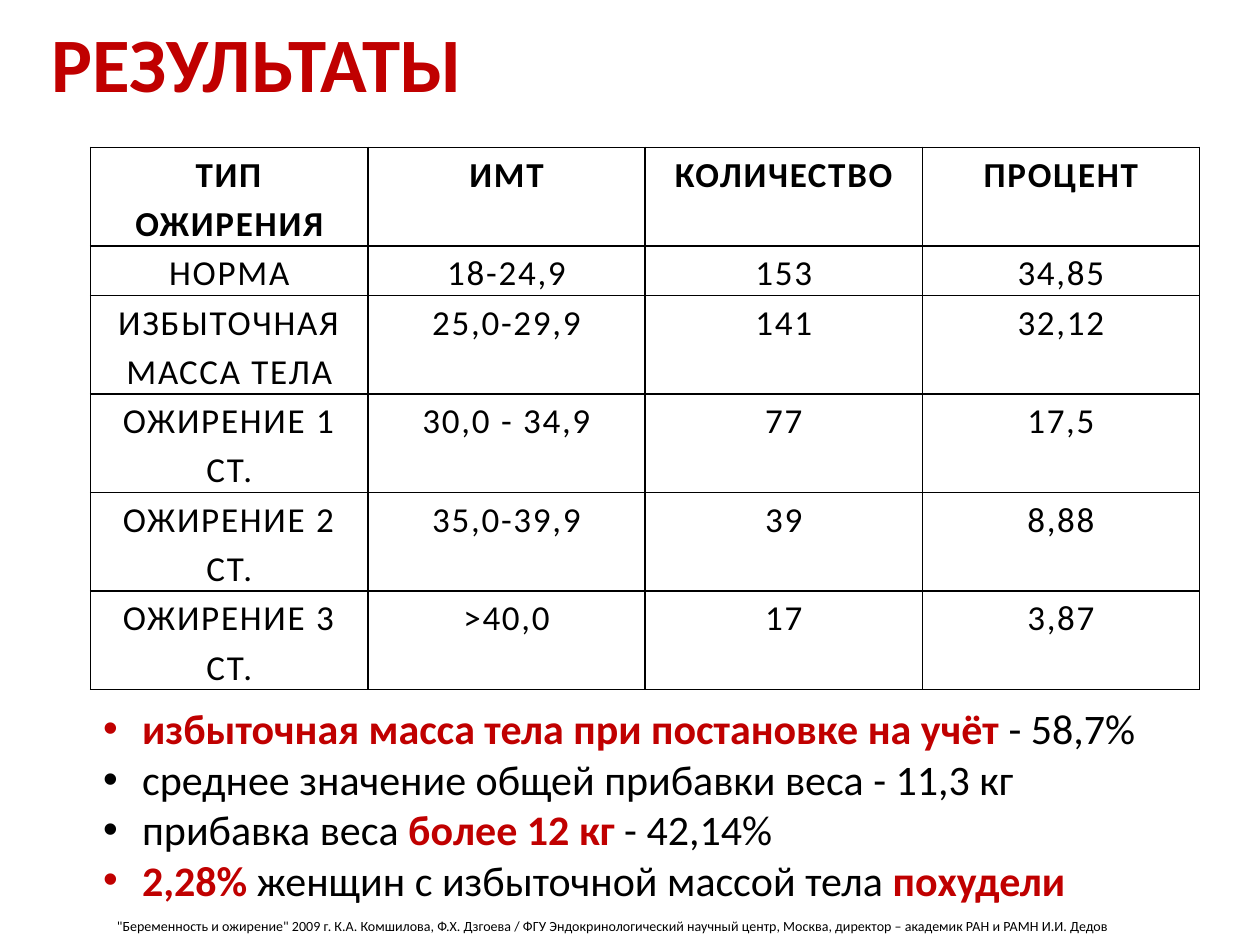
from lxml.etree import SubElement
from pptx import Presentation
from pptx.dml.color import RGBColor
from pptx.enum.text import MSO_ANCHOR, PP_ALIGN
from pptx.oxml.ns import qn
from pptx.util import Inches, Pt

RED = "C00000"
BLACK = "000000"
WHITE = "FFFFFF"

RESULTS = [
    ["ТИП ОЖИРЕНИЯ", "ИМТ", "КОЛИЧЕСТВО", "ПРОЦЕНТ"],
    ["НОРМА", "18-24,9", "153", "34,85"],
    ["ИЗБЫТОЧНАЯ МАССА ТЕЛА", "25,0-29,9", "141", "32,12"],
    ["ОЖИРЕНИЕ 1 СТ.", "30,0 - 34,9", "77", "17,5"],
    ["ОЖИРЕНИЕ 2 СТ.", "35,0-39,9", "39", "8,88"],
    ["ОЖИРЕНИЕ 3 СТ.", ">40,0", "17", "3,87"],
]
ROW_HEIGHTS = [0.38, 0.38, 0.77, 0.38, 0.38, 0.38]

FINDINGS = [
    [("избыточная масса тела при постановке на учёт", True), (" - 58,7%", False)],
    [("среднее значение общей прибавки веса - 11,3 кг", False)],
    [("прибавка веса ", False), ("более 12 кг", True), (" - 42,14%", False)],
    [("2,28%", True), (" женщин с избыточной массой тела ", False), ("похудели", True)],
]
CITATION = (
    '"Беременность и ожирение" 2009 г. К.А. Комшилова, Ф.Х. Дзгоева / '
    "ФГУ Эндокринологический научный центр, Москва, "
    "директор – академик РАН и РАМН И.И. Дедов"
)


def color(value):
    return RGBColor.from_string(value)


def add_span(para, text, size, ink=BLACK, bold=False):
    span = para.add_run()
    span.text = text
    span.font.name = "Calibri"
    span.font.size = Pt(size)
    span.font.bold = bold
    span.font.color.rgb = color(ink)
    return span


def add_frame(page, box):
    frame = page.shapes.add_textbox(*map(Inches, box)).text_frame
    frame.word_wrap = True
    return frame


def add_title(page, box):
    frame = add_frame(page, box)
    frame.vertical_anchor = MSO_ANCHOR.MIDDLE
    para = frame.paragraphs[0]
    para.line_spacing = 0.9
    add_span(para, "РЕЗУЛЬТАТЫ", 44, RED, True)


def add_borders(cell):
    properties = cell._tc.get_or_add_tcPr()
    for position, side in enumerate(("lnL", "lnR", "lnT", "lnB")):
        line = SubElement(properties, qn(f"a:{side}"), w=str(Pt(1)))
        fill = SubElement(line, qn("a:solidFill"))
        SubElement(fill, qn("a:srgbClr"), val=BLACK)
        properties.insert(position, line)


def fill_cell(cell, text, bold):
    cell.margin_left = cell.margin_right = Inches(0.07)
    cell.margin_top = cell.margin_bottom = 0
    cell.fill.solid()
    cell.fill.fore_color.rgb = color(WHITE)
    add_borders(cell)
    para = cell.text_frame.paragraphs[0]
    para.alignment = PP_ALIGN.CENTER
    para.line_spacing = 1.15
    para.space_after = Pt(10)
    span = add_span(para, text, 20, bold=bold)
    span.font._element.set("spc", "100")


def add_results(page, box):
    shape = page.shapes.add_table(len(RESULTS), len(RESULTS[0]), *map(Inches, box))
    table = shape.table
    table.first_row = table.horz_banding = False
    for column in table.columns:
        column.width = Inches(box[2] / len(RESULTS[0]))
    for index, (height, values) in enumerate(zip(ROW_HEIGHTS, RESULTS)):
        table.rows[index].height = Inches(height)
        for cell, text in zip(table.rows[index].cells, values):
            fill_cell(cell, text, bold=index == 0)


def add_findings(page, box):
    frame = add_frame(page, box)
    for index, finding in enumerate(FINDINGS):
        para = frame.add_paragraph() if index else frame.paragraphs[0]
        properties = para._p.get_or_add_pPr()
        properties.set("marL", str(Inches(0.31)))
        properties.set("indent", str(Inches(-0.31)))
        SubElement(properties, qn("a:buFont"), typeface="Arial")
        SubElement(properties, qn("a:buChar"), char="•")
        for text, strong in finding:
            add_span(para, text, 24, RED if strong else BLACK, strong)


def add_citation(page, box):
    add_span(add_frame(page, box).paragraphs[0], CITATION, 8)


def main():
    deck = Presentation()
    deck.slide_width, deck.slide_height = Inches(10), Inches(7.5)
    page = deck.slides.add_slide(deck.slide_layouts[6])
    add_results(page, (0.72, 1.17, 8.8, 4.22))
    add_title(page, (0.31, -0.19, 8.62, 1.45))
    add_findings(page, (0.72, 5.53, 8.96, 1.7))
    add_citation(page, (0.83, 7.23, 10.25, 0.27))
    deck.save("out.pptx")


if __name__ == "__main__":
    main()
